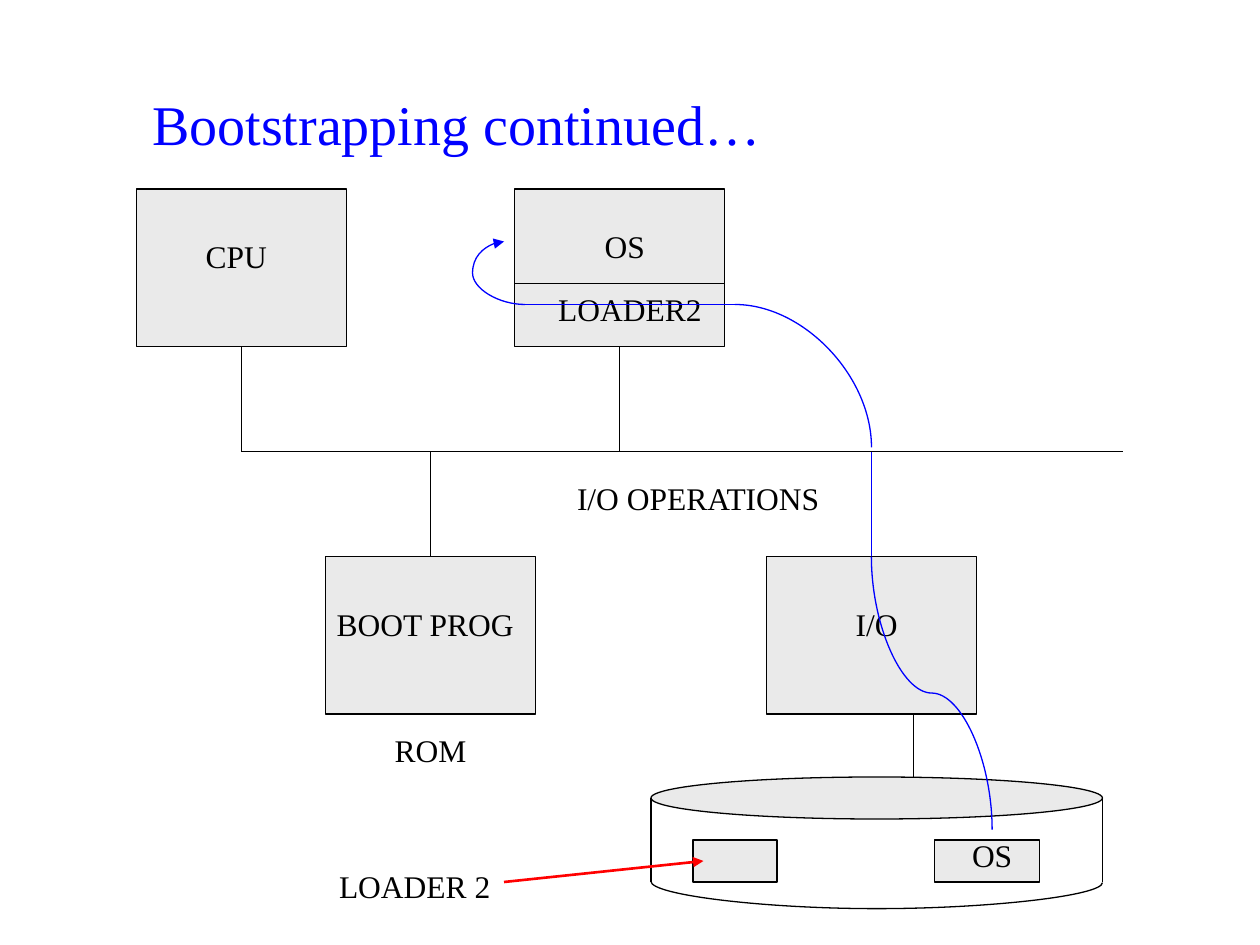
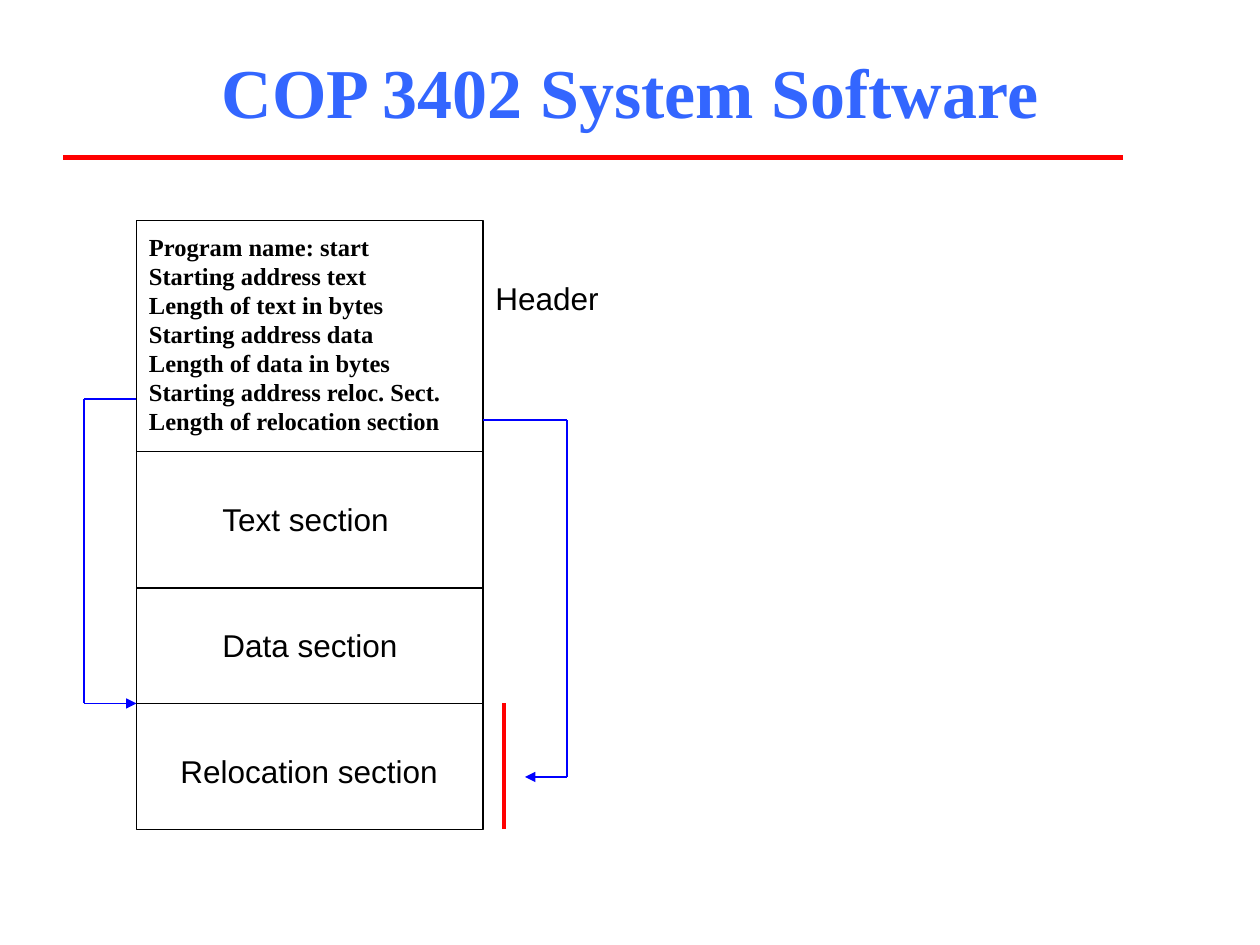
import pptx
import pptx.util
import pptx.dml.color
import pptx.enum.shapes
import pptx.enum.text
import pptx.oxml
import pptx.oxml.ns

RGBColor = pptx.dml.color.RGBColor
Shape = pptx.enum.shapes.MSO_SHAPE
Connector = pptx.enum.shapes.MSO_CONNECTOR
Align = pptx.enum.text.PP_ALIGN
Anchor = pptx.enum.text.MSO_ANCHOR

BLACK = RGBColor(0x00, 0x00, 0x00)
GREY = RGBColor(0xEA, 0xEA, 0xEA)
BLUE = RGBColor(0x00, 0x00, 0xFF)
TITLE_BLUE = RGBColor(0x33, 0x66, 0xFF)
RED = RGBColor(0xFF, 0x00, 0x00)
SERIF, SANS = "Times New Roman", "Arial"

# All positions are in grid units, twelve to the inch
GRID = 12
THIN = 0.75

# ---- Content: bootstrapping diagram ----
BOOT_TITLE = "Bootstrapping continued…"
UNIT_WIDTH, UNIT_HEIGHT = 20, 15
BUS_Y = 43
UPPER_Y, LOWER_Y = 18, 53
CPU_X, MEMORY_X, ROM_X, IO_X = 13, 49, 31, 73
UNITS = [(CPU_X, UPPER_Y), (MEMORY_X, UPPER_Y), (ROM_X, LOWER_Y), (IO_X, LOWER_Y)]
DISK_LEFT, DISK_RIGHT, DISK_TOP, DISK_BOTTOM = 62, 105, 74, 84
DISK_FILES = [(66, 80, 8, 4), (89, 80, 10, 4)]
BOOT_LABELS = [  # text, left, top, width
    ("BOOT PROG", 29, 57, 23), ("ROM", 33, 69, 16), ("I/O", 72, 57, 23),
    ("LOADER 2", 29, 82, 21), ("OS", 89, 79, 11), ("I/O OPERATIONS", 48, 45, 37),
    ("CPU", 14, 22, 17), ("OS", 48, 21, 23), ("LOADER2", 50, 27, 20),
]
LOAD_CURVES = [  # start, end, rotation, mirrored, bend, arrow
    ((94.5, 79), (83, 53), 90, True, 0.5, False),
    ((50, 29), (48, 23), 180, False, 2.5, True),
    ((70, 29), (83, 42.6), 0, False, None, False),
]

# ---- Content: object file layout ----
COURSE_TITLE = "COP 3402 System Software"
HEADER_FIELDS = [
    "Program name: start", "Starting address text", "Length of text in bytes",
    "Starting address data", "Length of data in bytes",
    "Starting address reloc. Sect.", "Length of relocation section",
]
FILE_LEFT, FILE_RIGHT, FILE_TOP, FILE_BOTTOM = 13, 46, 21, 79
SECTION_EDGES = [43, 56, 67]
SECTION_LABELS = [  # text, left, top, width
    ("Header", 46, 26, 12.2), ("Text section", 20, 47, 18.6),
    ("Data section", 20, 59, 19.1), ("Relocation section", 16, 71, 26.9),
]
POINTER_ROUTES = [
    [(46, 40), (54, 40), (54, 74), (50, 74)],
    [(13, 38), (8, 38), (8, 67), (13, 67)],
]


def units(*values):
    return [pptx.util.Inches(value / GRID) for value in values]


def format_text(text_frame, size, color, font=SERIF, bold=False, align=Align.LEFT):
    for paragraph in text_frame.paragraphs:
        paragraph.alignment = align
        for run in paragraph.runs:
            run.font.name, run.font.size = font, pptx.util.Pt(size)
            run.font.bold, run.font.color.rgb = bold, color


def add_titled_slide(presentation, text, frame, size, color, bold=False):
    slide = presentation.slides.add_slide(presentation.slide_layouts[5])
    title = slide.shapes.title
    title.left, title.top, title.width, title.height = units(*frame)
    title.text_frame.text = text
    title.text_frame.vertical_anchor = Anchor.BOTTOM
    format_text(title.text_frame, size, color, bold=bold, align=Align.CENTER)
    return slide


def add_outline(slide, kind, frame, fill=None):
    shape = slide.shapes.add_shape(kind, *units(*frame))
    shape.shadow.inherit = False
    if fill is None:
        shape.fill.background()
    else:
        shape.fill.solid()
        shape.fill.fore_color.rgb = fill
    shape.line.color.rgb, shape.line.width = BLACK, pptx.util.Pt(THIN)


def add_label(slide, text, left, top, width, height=4.8, wrap=True):
    box = slide.shapes.add_textbox(*units(left, top, width, height))
    box.text_frame.word_wrap = wrap
    box.text_frame.text = text
    return box.text_frame


def add_line(slide, start, end, color=BLACK, width=THIN, arrow=False, kind=Connector.STRAIGHT):
    connector = slide.shapes.add_connector(kind, *units(*start, *end))
    connector.line.color.rgb, connector.line.width = color, pptx.util.Pt(width)
    if arrow:
        line = connector.line._get_or_add_ln()
        line.append(pptx.oxml.parse_xml(
            f'<a:tailEnd {pptx.oxml.ns.nsdecls("a")} type="triangle"/>'))
    properties = connector._element.spPr
    properties.append(pptx.oxml.parse_xml(f'<a:effectLst {pptx.oxml.ns.nsdecls("a")}/>'))
    return connector


def add_curve(slide, start, end, rotation, mirrored, bend, arrow=False, color=BLUE):
    """Lay the curve's frame around the middle of its ends, then turn it."""
    width, height = abs(end[0] - start[0]), abs(end[1] - start[1])
    if rotation in (90, 270):
        width, height = max(height, 0.12), width
    middle_x, middle_y = (start[0] + end[0]) / 2, (start[1] + end[1]) / 2
    corner = (middle_x - width / 2, middle_y - height / 2)
    opposite = (middle_x + width / 2, middle_y + height / 2)
    connector = add_line(slide, corner, opposite, color, arrow=arrow, kind=Connector.CURVE)
    properties = connector._element.spPr
    frame = properties.find(pptx.oxml.ns.qn("a:xfrm"))
    frame.set("rot", str(rotation * 60000))
    if mirrored:
        frame.set("flipH", "1")
    geometry = properties.find(pptx.oxml.ns.qn("a:prstGeom"))
    if bend is None:
        geometry.set("prst", "curvedConnector2")
    else:
        guides = geometry.find(pptx.oxml.ns.qn("a:avLst"))
        guides.append(pptx.oxml.parse_xml(
            f'<a:gd {pptx.oxml.ns.nsdecls("a")} name="adj1" fmla="val {round(bend * 100000)}"/>'))


def build_bootstrapping(presentation):
    slide = add_titled_slide(presentation, BOOT_TITLE, (10, 8, 67, 7.5), 32, BLUE)

    # Units and their links to the bus
    for left, top in UNITS:
        add_outline(slide, Shape.RECTANGLE, (left, top, UNIT_WIDTH, UNIT_HEIGHT), GREY)
        center = left + UNIT_WIDTH / 2
        edge = top + UNIT_HEIGHT if top < BUS_Y else top
        first, last = sorted((edge, BUS_Y))
        add_line(slide, (center, first), (center, last), BLUE if left == IO_X else BLACK)
    add_line(slide, (CPU_X + UNIT_WIDTH / 2, BUS_Y), (107, BUS_Y))
    add_line(slide, (MEMORY_X, 27), (MEMORY_X + UNIT_WIDTH, 27))

    # Disk with its two files
    add_outline(slide, Shape.OVAL, (DISK_LEFT, DISK_TOP, DISK_RIGHT - DISK_LEFT, 4), GREY)
    for side in (DISK_LEFT, DISK_RIGHT):
        add_line(slide, (side, DISK_TOP + 2), (side, DISK_BOTTOM))
    add_curve(slide, (DISK_LEFT, DISK_BOTTOM), (DISK_RIGHT, DISK_BOTTOM), 270, True, 22,
              color=BLACK)
    for frame in DISK_FILES:
        add_outline(slide, Shape.RECTANGLE, frame, GREY)
    add_line(slide, (87, LOWER_Y + UNIT_HEIGHT), (87, DISK_TOP))

    # Labels
    for label in BOOT_LABELS:
        format_text(add_label(slide, *label), 18, BLACK, align=Align.CENTER)

    # Loading route from disk to memory
    add_line(slide, (48, 84), (67, 82), RED, 1.5, arrow=True)
    add_line(slide, (70, 29), (50, 29), BLUE)
    for curve in LOAD_CURVES:
        add_curve(slide, *curve)


def build_object_file(presentation):
    slide = add_titled_slide(presentation, COURSE_TITLE, (6, 4, 108, 9.2), 40, TITLE_BLUE, True)
    add_line(slide, (6, 15), (107, 15), RED, 3)

    # Header fields
    fields = add_label(slide, "\n".join(HEADER_FIELDS), FILE_LEFT, 22, 51, 59)
    format_text(fields, 14, BLACK, bold=True)
    for paragraph in fields.paragraphs:
        paragraph.line_spacing = 0.8
        paragraph.space_before = pptx.util.Pt(3.2)

    # File outline and sections
    add_outline(slide, Shape.RECTANGLE,
                (FILE_LEFT, FILE_TOP, FILE_RIGHT - FILE_LEFT, FILE_BOTTOM - FILE_TOP))
    for edge in SECTION_EDGES:
        add_line(slide, (FILE_LEFT, edge), (FILE_RIGHT, edge))
    for label in SECTION_LABELS:
        format_text(add_label(slide, *label, wrap=False), 18, BLACK, SANS)

    # Pointers to the relocation section
    for route in POINTER_ROUTES:
        for start, end in zip(route, route[1:]):
            add_line(slide, start, end, BLUE, arrow=end == route[-1])
    add_line(slide, (48, SECTION_EDGES[-1]), (48, FILE_BOTTOM), RED, 2.25)


def main():
    presentation = pptx.Presentation()
    presentation.slide_width = pptx.util.Inches(10)
    presentation.slide_height = pptx.util.Inches(7.5)
    build_bootstrapping(presentation)
    build_object_file(presentation)
    presentation.save("out.pptx")


if __name__ == "__main__":
    main()
